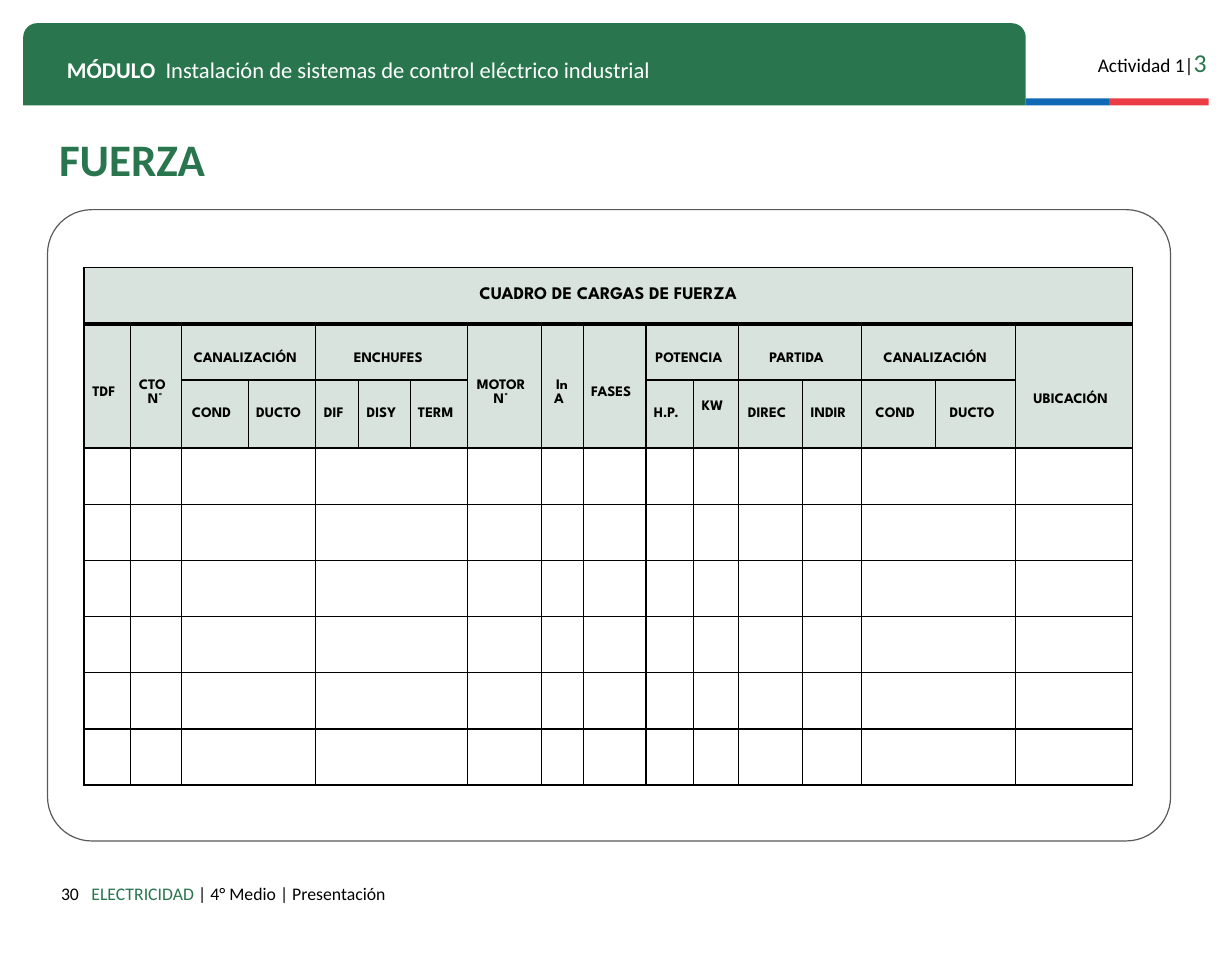
from lxml import etree
from pptx import Presentation
from pptx import util as u
from pptx.dml.color import RGBColor
from pptx.enum import shapes, text
from pptx.oxml.ns import qn

COLUMNS, ROWS = 1063, 827
UNIT = u.Inches(0.01)
GREEN, BLUE, RED = "29754D", "0F69B4", "EB3C46"
BLACK, WHITE, GREY, PALE = "000000", "FFFFFF", "595959", "D7E3DC"
BODY, HEADING = "Calibri", "League Spartan"
LEFT, CENTER, RIGHT = text.PP_ALIGN.LEFT, text.PP_ALIGN.CENTER, text.PP_ALIGN.RIGHT
LINE = 12

WIDTHS = [40, 44, 58, 58, 37, 45, 49, 64, 36, 54, 41, 39, 55, 51, 64, 69, 101]
HEIGHTS = [48.5, 48.5, 59] + [48.5] * 6
TALL_HEADINGS = {0: "TDF", 1: "CTO\nN°", 7: "MOTOR\nN°", 8: "In\nA", 9: "FASES", 16: "UBICACIÓN"}
GROUPS = {
    2: ("CANALIZACIÓN", ["COND", "DUCTO"]),
    4: ("ENCHUFES", ["DIF", "DISY", "TERM"]),
    10: ("POTENCIA", ["H.P.", "KW"]),
    12: ("PARTIDA", ["DIREC", "INDIR"]),
    14: ("CANALIZACIÓN", ["COND", "DUCTO"]),
}
WIDE_CELLS = {2: 2, 4: 3, 14: 2}
INDENTED = ("CTO\nN°", 1), ("In\nA", 0)


def grid(*counts):
    return [int(UNIT * count) for count in counts]


def color(value):
    return RGBColor.from_string(value)


def style(span, size, ink, bold=False, font=BODY):
    span.font.size = u.Pt(size)
    span.font.name = font
    span.font.bold = bold
    span.font.color.rgb = color(ink)


def add_block(page, kind, place, fill=None, line=None, adjustments=()):
    block = page.shapes.add_shape(kind, *grid(*place))
    block.shadow.inherit = False
    for index, value in enumerate(adjustments):
        block.adjustments[index] = value
    if fill:
        block.fill.solid()
        block.fill.fore_color.rgb = color(fill)
    else:
        block.fill.background()
    if line:
        block.line.color.rgb = color(line)
        block.line.width = u.Pt(0.75)
    else:
        block.line.fill.background()


def set_margins(item, left, top, right, bottom):
    item.margin_left, item.margin_top, item.margin_right, item.margin_bottom = grid(left, top, right, bottom)


def add_label(page, place, spans, align=LEFT):
    box = page.shapes.add_textbox(*grid(*place))
    frame = box.text_frame
    frame.word_wrap = True
    set_margins(frame, 10, 10, 10, 10)
    para = frame.paragraphs[0]
    para.alignment = align
    for words, size, ink, bold in spans:
        span = para.add_run()
        span.text = words
        style(span, size, ink, bold)


def set_title(page, words):
    title = page.shapes.title
    title.left, title.top, title.width, title.height = grid(41, 120, 425, 42)
    frame = title.text_frame
    frame.text = words
    frame.word_wrap = True
    frame.auto_size = text.MSO_AUTO_SIZE.NONE
    frame.vertical_anchor = text.MSO_ANCHOR.MIDDLE
    set_margins(frame, 10, 10, 10, 10)
    para = frame.paragraphs[0]
    para.alignment = LEFT
    para.line_spacing = 0.8
    style(para.runs[0], 28, GREEN, True)


def set_borders(cell, top, bottom):
    properties = cell._tc.get_or_add_tcPr()
    sides = {"a:lnL": 1, "a:lnR": 1, "a:lnT": top, "a:lnB": bottom}
    for index, (side, width) in enumerate(sides.items()):
        border = etree.Element(qn(side), w=str(u.Pt(width)))
        fill = etree.SubElement(border, qn("a:solidFill"))
        etree.SubElement(fill, qn("a:srgbClr"), val=BLACK)
        properties.insert(index, border)


def write_cell(cell, words, size=9, left=4, above=0, below=0):
    cell.text_frame.text = words
    cell.vertical_anchor = text.MSO_ANCHOR.MIDDLE
    set_margins(cell, left, 5 + above, 10, 5 + below)
    for index, para in enumerate(cell.text_frame.paragraphs):
        para.alignment = CENTER
        if (words, index) in INDENTED:
            para._p.get_or_add_pPr().set("marL", str(UNIT * 5))
        style(para.runs[0], size, BLACK, True, HEADING)


def write_headings(table):
    last = len(WIDTHS) - 1
    table.cell(0, 0).merge(table.cell(0, last))
    write_cell(table.cell(0, 0), "CUADRO DE CARGAS DE FUERZA", size=11, left=10)
    for column, words in TALL_HEADINGS.items():
        table.cell(1, column).merge(table.cell(2, column))
        write_cell(table.cell(1, column), words, above=LINE * (2 if column == last else 1))
    for column, (group, names) in GROUPS.items():
        table.cell(1, column).merge(table.cell(1, column + len(names) - 1))
        write_cell(table.cell(1, column), group, above=LINE)
        for offset, name in enumerate(names):
            write_cell(table.cell(2, column + offset), name, below=LINE if name == "KW" else 0)


def add_load_table(page):
    place = grid(72.5, 231, sum(WIDTHS), sum(HEIGHTS))
    table = page.shapes.add_table(len(HEIGHTS), len(WIDTHS), *place).table
    table.first_row = table.horz_banding = False
    for column, width in zip(table.columns, WIDTHS):
        column.width = UNIT * width
    for index, (row, height) in enumerate(zip(table.rows, HEIGHTS)):
        row.height = int(UNIT * height)
        for cell in row.cells:
            cell.fill.solid()
            cell.fill.fore_color.rgb = color(PALE if index < 3 else WHITE)
            set_borders(cell, 3 if index == 1 else 1, 3 if index == 0 else 1)
    write_headings(table)
    for row in range(3, len(HEIGHTS)):
        for column, count in WIDE_CELLS.items():
            table.cell(row, column).merge(table.cell(row, column + count - 1))


def main():
    deck = Presentation()
    deck.slide_width, deck.slide_height = grid(COLUMNS, ROWS)
    page = deck.slides.add_slide(deck.slide_layouts[5])
    kinds = shapes.MSO_SHAPE
    add_block(page, kinds.ROUND_2_SAME_RECTANGLE, (20, 20, 865, 71), GREEN, adjustments=(0.17, 0))
    add_block(page, kinds.RECTANGLE, (885, 85, 72, 6), BLUE)
    add_block(page, kinds.RECTANGLE, (957, 85, 86, 6), RED)
    add_label(page, (923, 30, 128, 38), [("Actividad 1|", 12, BLACK, False), ("3", 16, GREEN, False)], RIGHT)
    add_label(page, (48, 38, 110, 35), [("MÓDULO", 14, WHITE, True)])
    add_label(page, (133, 38, 729, 35), [("Instalación de sistemas de control eléctrico industrial", 14, WHITE, False)])
    add_label(page, (20, 753, 58, 29), [("30", 11, BLACK, False)], RIGHT)
    add_label(page, (69, 753, 714, 38), [("ELECTRICIDAD ", 11, GREEN, False), ("| 4° Medio | Presentación", 11, BLACK, False)])
    set_title(page, "FUERZA")
    add_block(page, kinds.ROUNDED_RECTANGLE, (41, 181, 969, 545), line=GREY, adjustments=(0.07,))
    add_load_table(page)
    deck.save("out.pptx")


if __name__ == "__main__":
    main()
